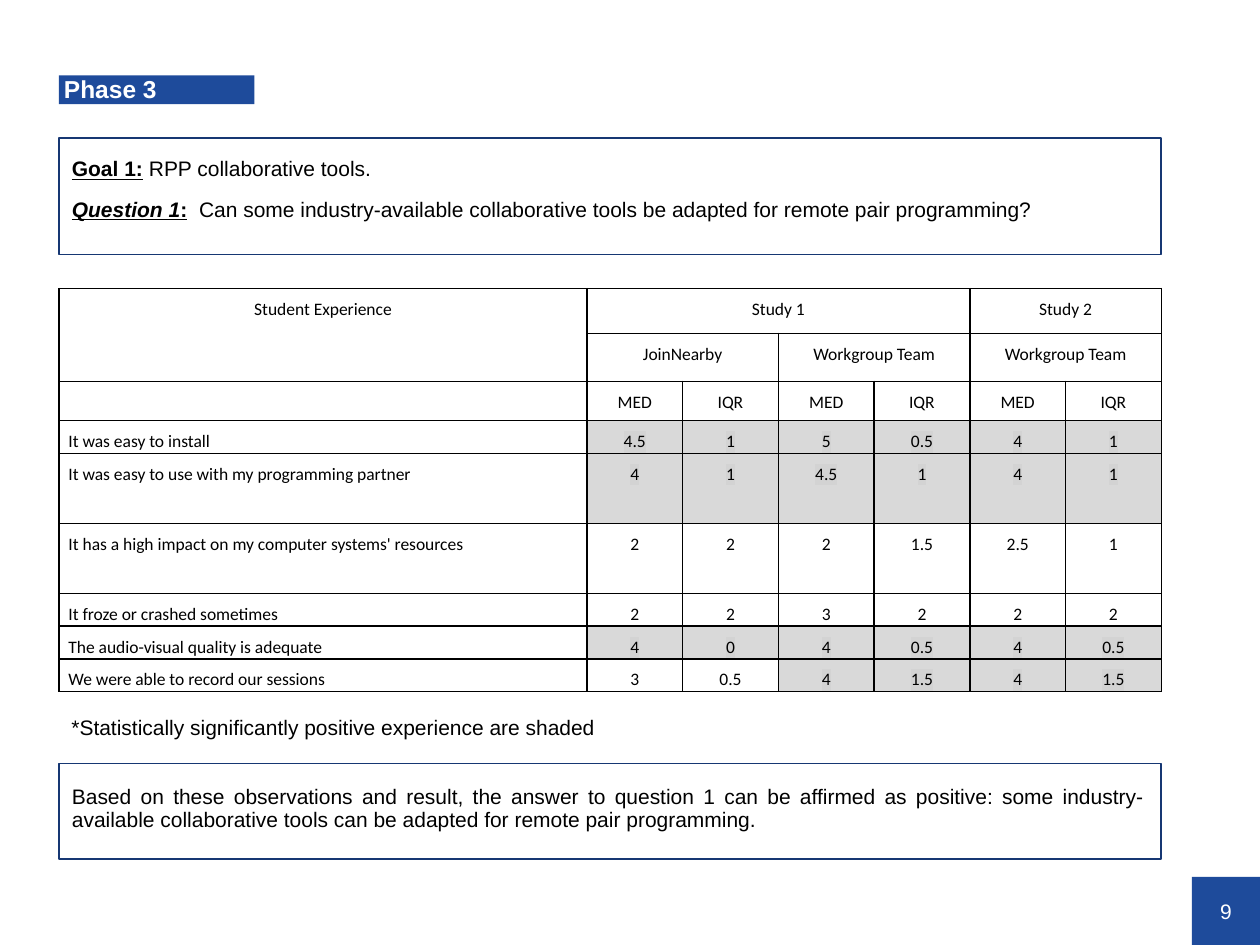
from lxml import etree
from pptx import Presentation
from pptx.dml.color import RGBColor
from pptx.enum.shapes import MSO_SHAPE
from pptx.enum.text import MSO_ANCHOR, PP_ALIGN
from pptx.oxml.ns import qn
from pptx.util import Cm, Pt

RECTANGLE = MSO_SHAPE.RECTANGLE
TOP, MIDDLE = MSO_ANCHOR.TOP, MSO_ANCHOR.MIDDLE
LEFT, CENTER, JUSTIFY = PP_ALIGN.LEFT, PP_ALIGN.CENTER, PP_ALIGN.JUSTIFY

BLUE = RGBColor(0x1E, 0x4B, 0x9B)
NAVY = RGBColor(0x16, 0x37, 0x73)
BLACK = RGBColor(0, 0, 0)
WHITE = RGBColor(0xFF, 0xFF, 0xFF)
SHADE = RGBColor(0xD9, 0xD9, 0xD9)
HIGHLIGHT = RGBColor(0xD3, 0xD3, 0xD3)

MARGIN, CONTENT_WIDTH = 1.19, 22.22
TEXT_LEFT, TEXT_WIDTH = 1.45, 21.64

# Student experience table
COLUMN_WIDTHS = [10.64] + [1.93] * 6
ROW_HEIGHTS = [0.9, 0.97, 0.79, 0.66, 1.41, 1.41, 0.66, 0.66, 0.66]
# (row, column, last row, last column, text)
MERGED_HEADERS = [
    (0, 0, 1, 0, "Student Experience"),
    (0, 1, 0, 4, "Study 1"),
    (0, 5, 0, 6, "Study 2"),
    (1, 1, 1, 2, "JoinNearby"),
    (1, 3, 1, 4, "Workgroup Team"),
    (1, 5, 1, 6, "Workgroup Team"),
]
# (statement, values, first shaded column or None)
RESULTS = [
    ("It was easy to install", "4.5 1 5 0.5 4 1", 1),
    ("It was easy to use with my programming partner", "4 1 4.5 1 4 1", 1),
    ("It has a high impact on my computer systems' resources",
     "2 2 2 1.5 2.5 1", None),
    ("It froze or crashed sometimes", "2 2 3 2 2 2", None),
    ("The audio-visual quality is adequate", "4 0 4 0.5 4 0.5", 1),
    ("We were able to record our sessions", "3 0.5 4 1.5 4 1.5", 3),
]


def write(paragraph, text, size=12, font="Arial", color=BLACK, bold=False,
          italic=False, underline=False, align=None, spacing=None,
          before=None, highlight=None):
    """Add one formatted run to a paragraph."""
    if align is not None:
        paragraph.alignment = align
    if spacing is not None:
        paragraph.line_spacing = spacing
    if before is not None:
        paragraph.space_before = Pt(before)
    run = paragraph.add_run()
    run.text = text
    run.font.size = Pt(size)
    run.font.name = font
    run.font.color.rgb = color
    run.font.bold = bold
    run.font.italic = italic
    run.font.underline = underline
    if highlight is not None:
        mark = etree.Element(qn("a:highlight"))
        etree.SubElement(mark, qn("a:srgbClr"), val=str(highlight))
        run.font._element.find(qn("a:latin")).addprevious(mark)


class SlideBuilder:
    def __init__(self, slide):
        self.slide = slide
        self.table_style = {"size": 10, "font": "Calibri", "spacing": 1.5}

    def rectangle(self, left, top, width, height, fill=None, line=None):
        box = self.slide.shapes.add_shape(
            RECTANGLE, Cm(left), Cm(top), Cm(width), Cm(height))
        box.shadow.inherit = False
        if fill is None:
            box.fill.background()
        else:
            box.fill.solid()
            box.fill.fore_color.rgb = fill
        if line is None:
            box.line.fill.background()
        else:
            box.line.color.rgb = line
            box.line.width = Pt(1)
        return box

    def label(self, left, top, width, height, text, inset=(0, 0), **style):
        box = self.rectangle(left, top, width, height, fill=BLUE)
        frame = self.prepare(box.text_frame, inset, MIDDLE)
        write(frame.paragraphs[0], text, color=WHITE, **style)

    def text(self, left, top, width, height, inset=(0, 0)):
        box = self.slide.shapes.add_textbox(
            Cm(left), Cm(top), Cm(width), Cm(height))
        return self.prepare(box.text_frame, inset, TOP)

    def prepare(self, frame, inset, anchor):
        frame.word_wrap = True
        frame.vertical_anchor = anchor
        frame.margin_left, frame.margin_top = Cm(inset[0]), Cm(inset[1])
        frame.margin_right = frame.margin_bottom = 0
        return frame

    def table(self, left, top, widths, heights):
        table = self.slide.shapes.add_table(
            len(heights), len(widths), Cm(left), Cm(top),
            Cm(sum(widths)), Cm(sum(heights))).table
        table.first_row = table.horz_banding = False
        for column, width in zip(table.columns, widths):
            column.width = Cm(width)
        for row, height in zip(table.rows, heights):
            row.height = Cm(height)
        for cell in table.iter_cells():
            cell.margin_left = cell.margin_right = Cm(0.19)
            cell.margin_top = cell.margin_bottom = 0
            self.borders(cell)
            cell.fill.background()
        return table

    def borders(self, cell):
        properties = cell._tc.get_or_add_tcPr()
        for side in ("a:lnL", "a:lnR", "a:lnT", "a:lnB"):
            line = etree.SubElement(properties, qn(side), w=str(Pt(1)))
            fill = etree.SubElement(line, qn("a:solidFill"))
            etree.SubElement(fill, qn("a:srgbClr"), val=str(BLACK))

    def cell(self, cell, text, align=CENTER, shaded=False):
        if shaded:
            cell.fill.solid()
            cell.fill.fore_color.rgb = SHADE
        write(cell.text_frame.paragraphs[0], text, align=align,
              highlight=HIGHLIGHT if shaded else None, **self.table_style)


def main():
    deck = Presentation()
    deck.slide_width, deck.slide_height = Cm(25.4), Cm(19.05)
    page = SlideBuilder(deck.slides.add_slide(deck.slide_layouts[6]))

    # Slide number and title
    page.label(24.03, 17.68, 1.37, 1.37, "9", align=CENTER)
    page.label(MARGIN, 1.52, 3.94, 0.58, "Phase 3", inset=(0.1, 0.05),
               size=14, bold=True, align=LEFT, spacing=0.9)

    # Goal and question
    goal = page.text(TEXT_LEFT, 3.2, TEXT_WIDTH, 1.93)
    body = {"align": JUSTIFY, "spacing": 0.9}
    goal_line = goal.paragraphs[0]
    write(goal_line, "Goal 1:", bold=True, underline=True, **body)
    write(goal_line, " RPP collaborative tools.")
    question_line = goal.add_paragraph()
    write(question_line, "Question 1", bold=True, italic=True,
          underline=True, before=10, **body)
    write(question_line, ":", bold=True, underline=True)
    write(question_line, "  Can some industry-available collaborative tools "
          "be adapted for remote pair programming?")
    page.rectangle(MARGIN, 2.79, CONTENT_WIDTH, 2.34, line=NAVY)

    # Results table
    table = page.table(MARGIN, 5.82, COLUMN_WIDTHS, ROW_HEIGHTS)
    for row, column, last_row, last_column, heading in MERGED_HEADERS:
        origin = table.cell(row, column)
        origin.merge(table.cell(last_row, last_column))
        page.cell(origin, heading)
    for column, measure in enumerate(["MED", "IQR"] * 3, start=1):
        page.cell(table.cell(2, column), measure)
    for row, (statement, values, shaded_from) in enumerate(RESULTS, start=3):
        page.cell(table.cell(row, 0), statement, align=JUSTIFY)
        for column, value in enumerate(values.split(), start=1):
            shaded = shaded_from is not None and column >= shaded_from
            page.cell(table.cell(row, column), value, shaded=shaded)

    # Footnote
    footnote = page.text(MARGIN, 14.27, CONTENT_WIDTH, 0.76, inset=(0.25, 0.13))
    write(footnote.paragraphs[0],
          "*Statistically significantly positive experience are shaded")

    # Conclusion
    conclusion = page.text(TEXT_LEFT, 15.85, TEXT_WIDTH, 1.5)
    write(conclusion.paragraphs[0],
          "Based on these observations and result, the answer to question 1 "
          "can be affirmed as positive: some industry-available collaborative "
          "tools can be adapted for remote pair programming.", **body)
    page.rectangle(MARGIN, 15.39, CONTENT_WIDTH, 1.93, line=NAVY)

    deck.save("out.pptx")


if __name__ == "__main__":
    main()
